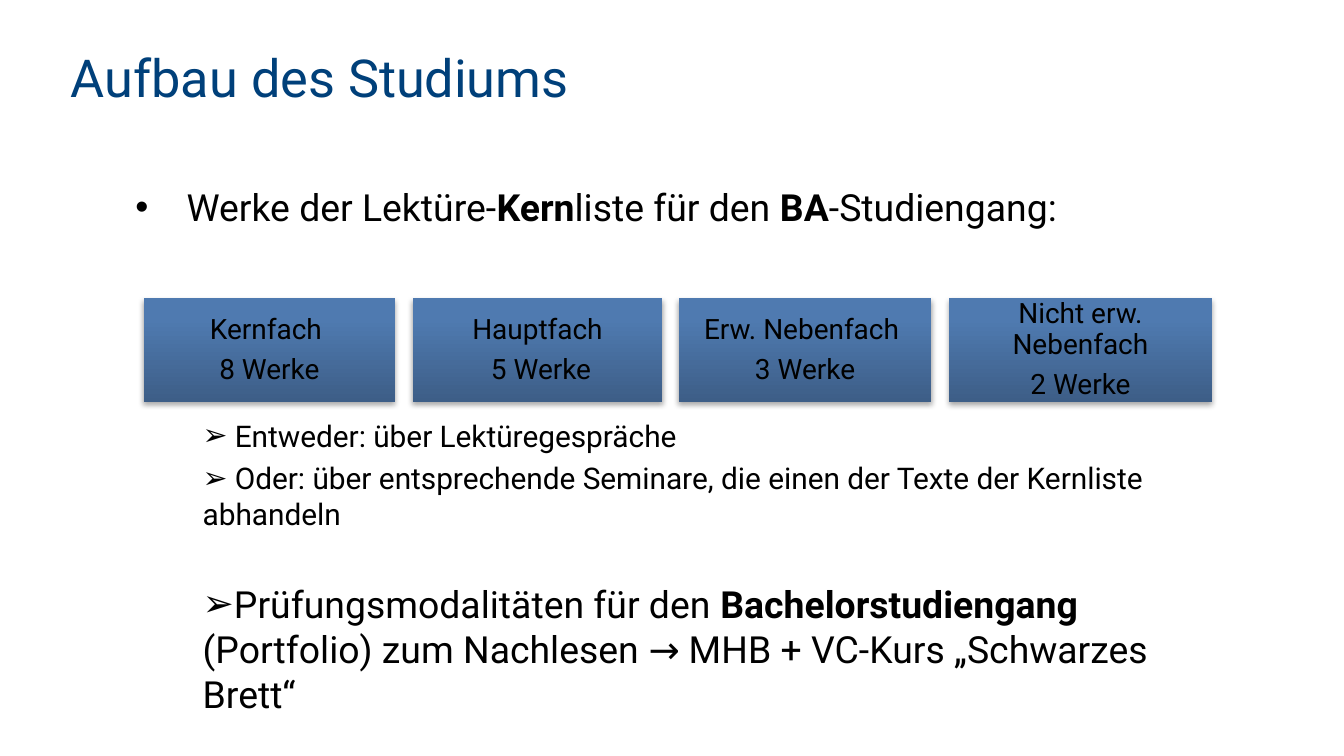
import copy

import lxml.etree
import pptx
import pptx.dml.color
import pptx.enum.shapes
import pptx.enum.text
import pptx.oxml
import pptx.oxml.ns
import pptx.util

Inches, Pt = pptx.util.Inches, pptx.util.Pt
qn = pptx.oxml.ns.qn
ALIGN = pptx.enum.text.PP_ALIGN
ANCHOR = pptx.enum.text.MSO_ANCHOR

WIDTH = 10
HEIGHT = WIDTH * 9 / 16
FONT = "Roboto"
GRADIENT = [(0, "3D5E87"), (0.8, "4F7AB0"), (1, "4D7AB3")]
SHADOW = (
    '<a:outerShdw xmlns:a="http://schemas.openxmlformats.org/drawingml/2006/main" '
    'blurRad="39370" dist="22860" dir="5400000" rotWithShape="0">'
    '<a:srgbClr val="000000"><a:alpha val="35000"/></a:srgbClr></a:outerShdw>'
)
SUBJECTS = [
    (1.07, 1.87, "Kernfach ", "8 Werke"),
    (3.07, 1.86, "Hauptfach", " 5 Werke"),
    (5.05, 1.88, "Erw. Nebenfach ", "3 Werke"),
    (7.06, 1.96, "Nicht erw. Nebenfach", "2 Werke"),
]


def rgb(value):
    return pptx.dml.color.RGBColor.from_string(value)


def add_text(p, text, size=20, color="000000", align=ALIGN.LEFT, before=0, after=0,
             line=1.0, bullet=None, margin=0, indent=0):
    """Fill a paragraph; parts of the text between ** marks are bold."""
    p.alignment, p.line_spacing = align, line
    p.space_before, p.space_after = Pt(before), Pt(after)
    for i, part in enumerate(text.split("**")):
        r = p.add_run()
        r.text = part
        r.font.name, r.font.size, r.font.bold = FONT, Pt(size), i % 2 == 1
        r.font.color.rgb = rgb(color)
    if bullet:
        ppr = p._p.get_or_add_pPr()
        ppr.set("marL", str(Inches(margin)))
        ppr.set("indent", str(Inches(indent)))
        lxml.etree.SubElement(ppr, qn("a:buFont")).set("typeface", "Arial")
        lxml.etree.SubElement(ppr, qn("a:buChar")).set("char", bullet)


def add_box(s, x, y, w, h):
    tf = s.shapes.add_textbox(Inches(x), Inches(y), Inches(w), Inches(h)).text_frame
    tf.word_wrap = True
    return tf


def add_title(s, x, y, w, h):
    tf = add_box(s, x, y, w, h)
    add_text(tf.paragraphs[0], "Aufbau des Studiums", size=28, color="00407A")


def add_body(s, x, y, w, h):
    tf = add_box(s, x, y, w, h)
    add_text(tf.paragraphs[0], "Werke der Lektüre-**Kern**liste für den **BA**-Studiengang:",
             before=4, bullet="•", margin=0.38, indent=-0.38)
    points = [
        (" Entweder: über Lektüregespräche", 16, 101),
        (" Oder: über entsprechende Seminare, die einen der Texte der Kernliste abhandeln",
         16, 3.7),
        ("Prüfungsmodalitäten für den **Bachelorstudiengang **(Portfolio) zum Nachlesen "
         "→ MHB + VC-Kurs „Schwarzes Brett“", 20, 26.5),
    ]
    for text, size, before in points:
        add_text(tf.add_paragraph(), text, size=size, before=before, bullet="➢", margin=0.5)


def style_card(sp):
    """Give the card its three-stop vertical gradient and soft shadow."""
    sp.fill.gradient()
    sp.fill.gradient_angle = 90
    stops = sp._element.spPr.find(qn("a:gradFill")).find(qn("a:gsLst"))
    stops.append(copy.deepcopy(stops[-1]))
    for stop, (position, color) in zip(sp.fill.gradient_stops, GRADIENT):
        stop.position, stop.color.rgb = position, rgb(color)
    sp.line.fill.background()
    sp.shadow.inherit = False
    sp._element.spPr.find(qn("a:effectLst")).append(pptx.oxml.parse_xml(SHADOW))


def add_card(s, x, y, w, h, lines):
    sp = s.shapes.add_shape(pptx.enum.shapes.MSO_SHAPE.RECTANGLE,
                            Inches(x), Inches(y), Inches(w), Inches(h))
    style_card(sp)
    tf = sp.text_frame
    tf.word_wrap, tf.vertical_anchor = True, ANCHOR.MIDDLE
    tf.margin_left = tf.margin_right = tf.margin_top = tf.margin_bottom = Inches(0.06)
    for i, text in enumerate(lines):
        p = tf.add_paragraph() if i else tf.paragraphs[0]
        add_text(p, text, size=15, align=ALIGN.CENTER, after=5.25, line=0.9)


def main():
    prs = pptx.Presentation()
    prs.slide_width, prs.slide_height = Inches(WIDTH), Inches(HEIGHT)
    s = prs.slides.add_slide(prs.slide_layouts[6])
    add_title(s, 0.43, 0.29, 8.03, 0.94)
    add_body(s, 0.91, 1.32, 8.17, 3.6)
    for x, w, *lines in SUBJECTS:
        add_card(s, x, 2.22, w, 0.77, lines)
    prs.save("out.pptx")


if __name__ == "__main__":
    main()
